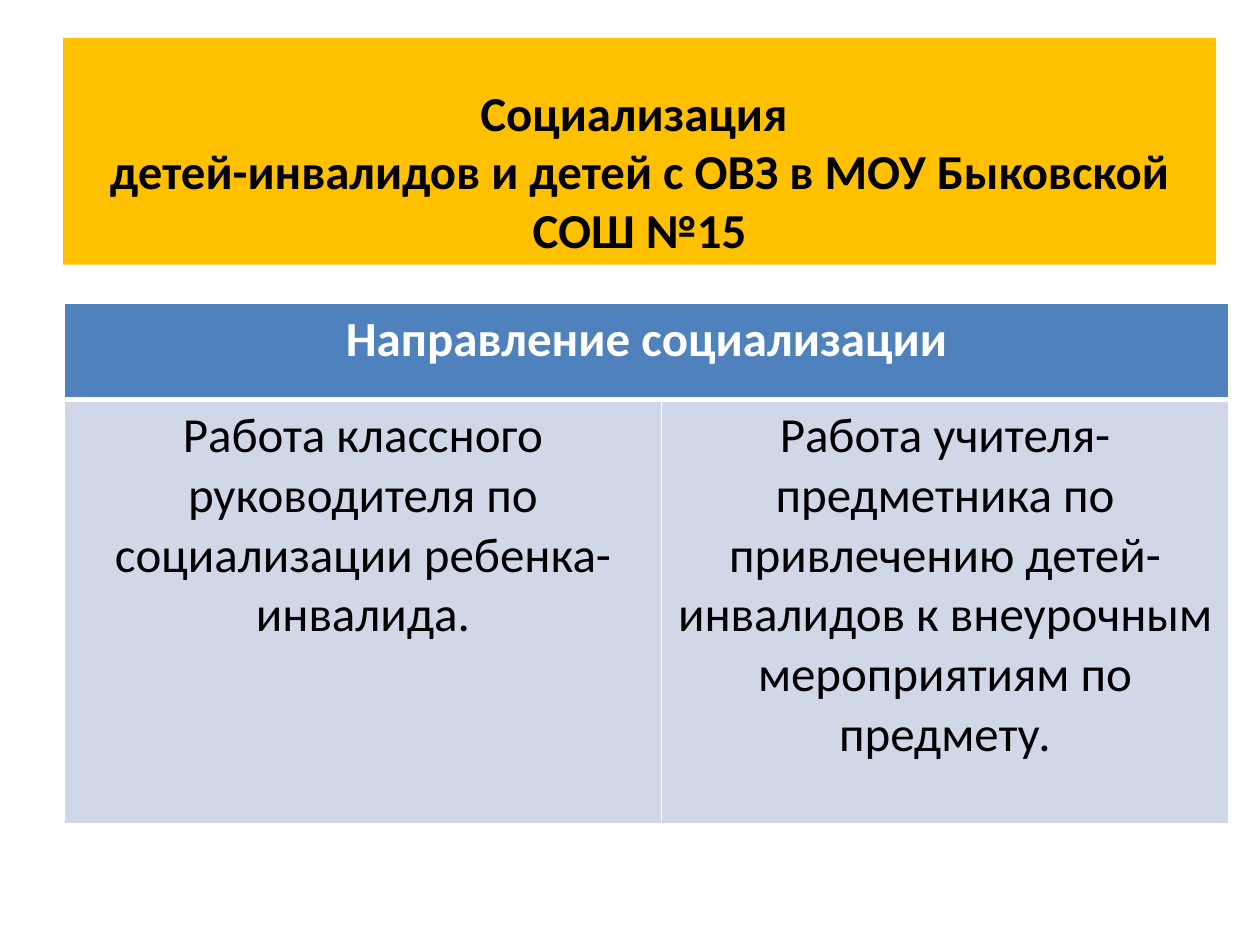
from dataclasses import dataclass

import lxml.etree
import pptx
import pptx.dml.color
import pptx.enum.text
import pptx.oxml.ns
import pptx.util

Inches = pptx.util.Inches
FONT = "Calibri"
SIDES = ("lnL", "lnR", "lnT", "lnB")


@dataclass
class Cell:
    row: int
    col: int
    text: str
    fill: str
    color: str = "000000"
    bold: bool = False
    bottom: float = 1


CELLS = [
    Cell(0, 0, "Направление социализации", "4F81BD", "FFFFFF", True, 3),
    Cell(1, 0, "Работа классного руководителя по социализации ребенка-инвалида.", "D0D8E8"),
    Cell(1, 1, "Работа учителя-предметника по привлечению детей-инвалидов к внеурочным "
               "мероприятиям по предмету.", "D0D8E8"),
]


def rgb(value: str) -> pptx.dml.color.RGBColor:
    return pptx.dml.color.RGBColor.from_string(value)


def set_fill(target, color: str) -> None:
    target.fill.solid()
    target.fill.fore_color.rgb = rgb(color)


def write(tf, text: str, *, size: float = 28, color: str = "000000", bold: bool = False) -> None:
    tf.word_wrap = True
    p = tf.paragraphs[0]
    p.alignment = pptx.enum.text.PP_ALIGN.CENTER
    for i, line in enumerate(text.split("\n")):
        if i:
            p.add_line_break()
        r = p.add_run()
        r.text = line
        r.font.name = FONT
        r.font.size = pptx.util.Pt(size)
        r.font.bold = bold
        r.font.color.rgb = rgb(color)


def set_borders(cell, color: str, bottom: float) -> None:
    qn = pptx.oxml.ns.qn
    tc_pr = cell._tc.get_or_add_tcPr()
    for i, side in enumerate(SIDES):
        width = bottom if side == "lnB" else 1
        ln = lxml.etree.Element(qn(f"a:{side}"), w=str(pptx.util.Pt(width)))
        fill = lxml.etree.SubElement(ln, qn("a:solidFill"))
        lxml.etree.SubElement(fill, qn("a:srgbClr"), val=color)
        tc_pr.insert(i, ln)


def draw_cell(table, item: Cell) -> None:
    cell = table.cell(item.row, item.col)
    write(cell.text_frame, item.text, color=item.color, bold=item.bold)
    set_fill(cell, item.fill)
    set_borders(cell, "FFFFFF", item.bottom)


def main() -> None:
    prs = pptx.Presentation()
    prs.slide_width, prs.slide_height = Inches(10), Inches(7.5)
    s = prs.slides.add_slide(prs.slide_layouts[5])

    sp = s.shapes.title
    sp.left, sp.top, sp.width, sp.height = map(Inches, (0.5, 0.3, 9.15, 1.8))
    set_fill(sp, "FFC000")
    tf = sp.text_frame
    write(tf, "Социализация \nдетей-инвалидов и детей с ОВЗ в МОУ Быковской СОШ №15",
          size=27.9, bold=True)
    tf.auto_size = pptx.enum.text.MSO_AUTO_SIZE.NONE
    tf.vertical_anchor = pptx.enum.text.MSO_ANCHOR.BOTTOM

    table = s.shapes.add_table(2, 2, *map(Inches, (0.51, 2.41, 9.24, 4.13))).table
    table.first_row = table.horz_banding = False
    for column, width in zip(table.columns, (4.74, 4.5)):
        column.width = Inches(width)
    for row, height in zip(table.rows, (0.76, 3.37)):
        row.height = Inches(height)
    table.cell(0, 0).merge(table.cell(0, 1))
    for item in CELLS:
        draw_cell(table, item)

    prs.save("out.pptx")


if __name__ == "__main__":
    main()
